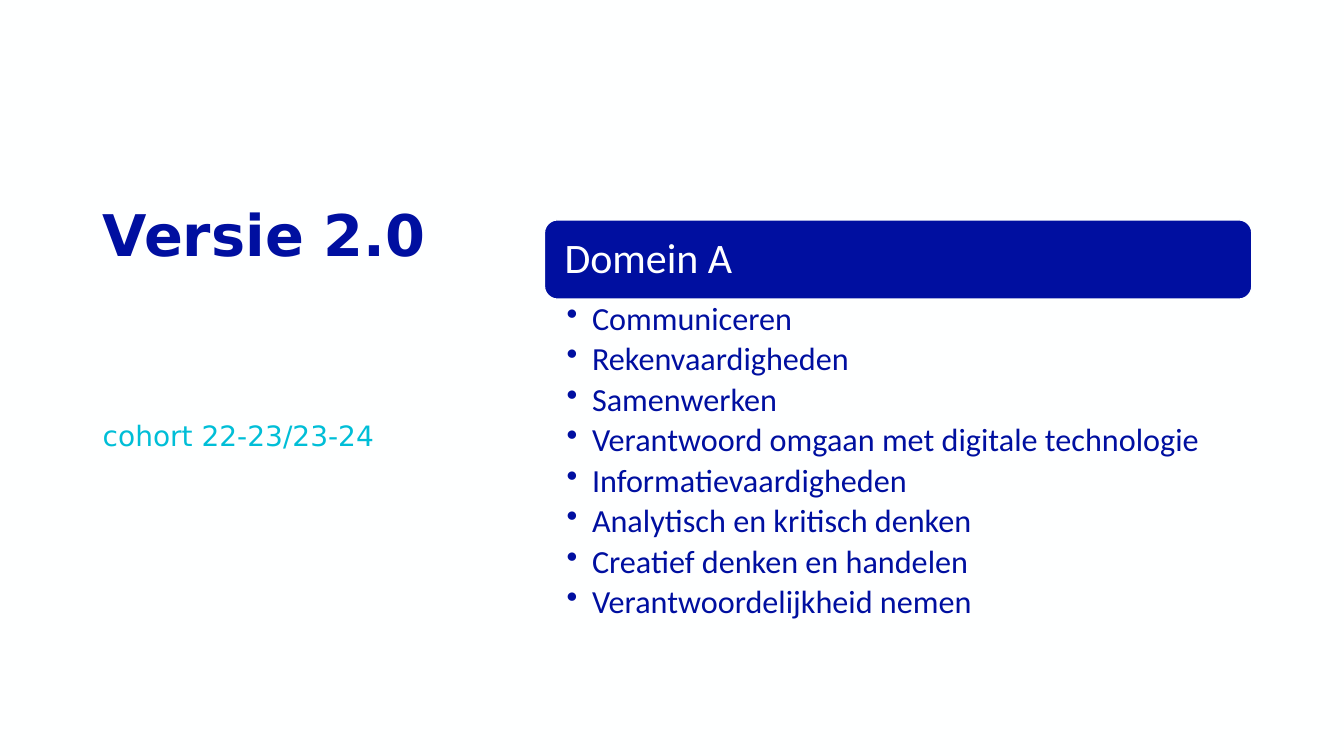
"""Build the slide that lists the skills of Domein A for version 2.0."""
from dataclasses import dataclass

from lxml import etree
from pptx import Presentation
from pptx.dml import color
from pptx.enum import shapes, text
from pptx.oxml import ns
from pptx.util import Cm, Pt


@dataclass(frozen=True)
class Theme:
    """Colours, fonts and type sizes of the slide."""
    navy: str = "000FA0"
    cyan: str = "00BED7"
    white: str = "FEFFFF"
    heading_font: str = "DejaVu Sans"
    list_font: str = "Calibri"
    title_size: float = 41
    cohort_size: float = 20
    domain_size: float = 30
    skill_size: float = 23


@dataclass(frozen=True)
class Area:
    """Place and size of a box in centimetres."""
    left: float
    top: float
    width: float
    height: float

    def lengths(self) -> tuple[Cm, Cm, Cm, Cm]:
        """Return the four measures as lengths."""
        return Cm(self.left), Cm(self.top), Cm(self.width), Cm(self.height)


THEME = Theme()
TITLE = Area(2.34, 5.08, 10.95, 5.13)
COHORT = Area(2.34, 10.52, 10.95, 6.02)
DOMAIN = Area(13.72, 5.54, 17.83, 2)
SKILLS = Area(13.72, 7.52, 17.83, 8.79)
SKILL_NAMES = (
    "Communiceren",
    "Rekenvaardigheden",
    "Samenwerken",
    "Verantwoord omgaan met digitale technologie",
    "Informatievaardigheden",
    "Analytisch en kritisch denken",
    "Creatief denken en handelen",
    "Verantwoordelijkheid nemen",
)


def rgb(value: str) -> color.RGBColor:
    """Turn a hex value into a colour."""
    return color.RGBColor.from_string(value)


def add_bullet(para, indent: float = 0.64) -> None:
    """Give a paragraph a hanging round bullet."""
    para.level = 1
    properties = para._p.get_or_add_pPr()
    properties.set("marL", str(Cm(indent)))
    properties.set("indent", str(-Cm(indent)))
    etree.SubElement(properties, ns.qn("a:buChar"), char="•")


def write(box, *lines: str, font: str, size: float, ink: str, bold: bool = False,
          bullets: bool = False, after: float = 0, anchor=text.MSO_ANCHOR.TOP,
          insets: tuple[float, float, float, float] = (0.25, 0.13, 0.25, 0.13)) -> None:
    """Fill a box with one paragraph for each line."""
    frame = box.text_frame
    frame.word_wrap = True
    frame.vertical_anchor = anchor
    (frame.margin_left, frame.margin_top,
     frame.margin_right, frame.margin_bottom) = map(Cm, insets)
    for index, line in enumerate(lines):
        para = frame.add_paragraph() if index else frame.paragraphs[0]
        if bullets:
            add_bullet(para)
        para.alignment = text.PP_ALIGN.LEFT
        para.line_spacing = 0.9
        para.space_after = Pt(after)
        span = para.add_run()
        span.text = line
        span.font.name = font
        span.font.size = Pt(size)
        span.font.bold = bold
        span.font.color.rgb = rgb(ink)


def add_domain_bar(page):
    """Add the rounded bar above the list."""
    bar = page.shapes.add_shape(shapes.MSO_SHAPE.ROUNDED_RECTANGLE, *DOMAIN.lengths())
    bar.shadow.inherit = False
    bar.fill.solid()
    bar.fill.fore_color.rgb = rgb(THEME.navy)
    bar.line.color.rgb = rgb(THEME.white)
    bar.line.width = Pt(1)
    return bar


def main() -> None:
    """Build and save the deck."""
    deck = Presentation()
    deck.slide_width, deck.slide_height = Cm(33.87), Cm(19.05)
    page = deck.slides.add_slide(deck.slide_layouts[6])
    page.background.fill.solid()
    page.background.fill.fore_color.rgb = rgb(THEME.white)

    write(page.shapes.add_textbox(*TITLE.lengths()), "Versie 2.0", bold=True,
          font=THEME.heading_font, size=THEME.title_size, ink=THEME.navy)
    write(page.shapes.add_textbox(*COHORT.lengths()), "cohort 22-23/23-24",
          font=THEME.heading_font, size=THEME.cohort_size, ink=THEME.cyan)
    write(add_domain_bar(page), "Domein A", anchor=text.MSO_ANCHOR.MIDDLE,
          font=THEME.list_font, size=THEME.domain_size, ink=THEME.white,
          insets=(0.41, 0.3, 0.41, 0.3))
    write(page.shapes.add_textbox(*SKILLS.lengths()), *SKILL_NAMES, bullets=True,
          font=THEME.list_font, size=THEME.skill_size, ink=THEME.navy,
          after=4.1, insets=(0.56, 0.1, 0.58, 0.1))
    deck.save("out.pptx")


if __name__ == "__main__":
    main()
